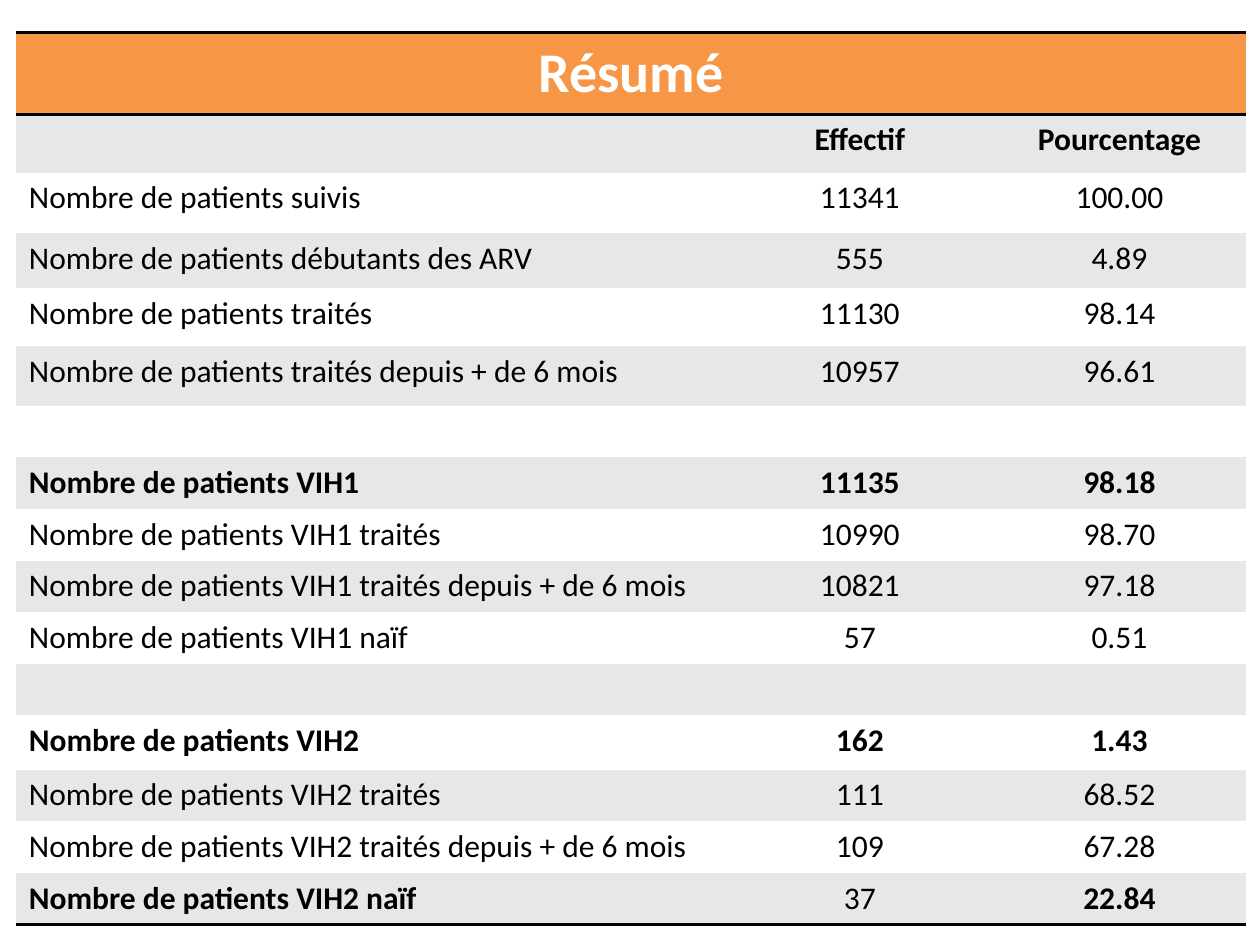
from typing import NamedTuple

from lxml import etree
from pptx import Presentation
from pptx.dml.color import RGBColor
from pptx.enum.text import PP_ALIGN
from pptx.oxml.ns import qn
from pptx.util import Inches, Pt

LEFT, CENTER = PP_ALIGN.LEFT, PP_ALIGN.CENTER
NO_STYLE_NO_GRID = "{2D5ABB26-0587-4C30-8999-92F81FD0307C}"
FONT = "Calibri"
BLACK, WHITE, GREY, ORANGE = "000000", "FFFFFF", "E7E7E7", "F79646"
COLUMN_WIDTHS = (5.64, 2.11, 2.01)
TITLE_HEIGHT = 0.65
RULE_WIDTH = 2


class Row(NamedTuple):
    label: str = ""
    count: str = ""
    percentage: str = ""
    height: float = 0.41
    bold: tuple[bool, bool, bool] = (False, False, False)


ALL_BOLD = (True, True, True)
ROWS = [
    Row("", "Effectif", "Pourcentage", 0.46, ALL_BOLD),
    Row("Nombre de patients suivis", "11341", "100.00", 0.48),
    Row("Nombre de patients débutants des ARV", "555", "4.89", 0.44),
    Row("Nombre de patients traités", "11130", "98.14", 0.46),
    Row("Nombre de patients traités depuis + de 6 mois", "10957", "96.61", 0.47),
    Row(),
    Row("Nombre de patients VIH1", "11135", "98.18", bold=ALL_BOLD),
    Row("Nombre de patients VIH1 traités", "10990", "98.70"),
    Row("Nombre de patients VIH1 traités depuis + de 6 mois", "10821", "97.18"),
    Row("Nombre de patients VIH1 naïf", "57", "0.51"),
    Row(),
    Row("Nombre de patients VIH2", "162", "1.43", 0.43, ALL_BOLD),
    Row("Nombre de patients VIH2 traités", "111", "68.52"),
    Row("Nombre de patients VIH2 traités depuis + de 6 mois", "109", "67.28"),
    Row("Nombre de patients VIH2 naïf", "37", "22.84", bold=(True, False, True)),
]


def rgb(value: str) -> RGBColor:
    return RGBColor.from_string(value)


def fill_cell(cell, color: str) -> None:
    cell.fill.solid()
    cell.fill.fore_color.rgb = rgb(color)


def write_cell(cell, text: str, size: int, color: str, bold: bool, align) -> None:
    paragraph = cell.text_frame.paragraphs[0]
    paragraph.alignment = align
    paragraph.font.size = Pt(size)
    if not text:
        return
    run = paragraph.add_run()
    run.text = text
    for attribute, value in {"name": FONT, "size": Pt(size), "bold": bold}.items():
        setattr(run.font, attribute, value)
    run.font.color.rgb = rgb(color)


def rule_cell(cell, *sides: str) -> None:
    """Draw black rules on the given sides ("T", "B"), listed in schema order."""
    properties = cell._tc.get_or_add_tcPr()
    for position, side in enumerate(sides):
        line = etree.Element(qn(f"a:ln{side}"), w=str(Pt(RULE_WIDTH)))
        solid = etree.SubElement(line, qn("a:solidFill"))
        etree.SubElement(solid, qn("a:srgbClr"), val=BLACK)
        properties.insert(position, line)


def add_summary_table(slide) -> None:
    heights = [TITLE_HEIGHT] + [row.height for row in ROWS]
    table = slide.shapes.add_table(
        len(heights), len(COLUMN_WIDTHS), Inches(0.13), Inches(0.26),
        Inches(sum(COLUMN_WIDTHS)), Inches(sum(heights))).table
    table.first_row = table.horz_banding = False
    table._tbl.tblPr.find(qn("a:tableStyleId")).text = NO_STYLE_NO_GRID
    for column, width in zip(table.columns, COLUMN_WIDTHS):
        column.width = Inches(width)
    for table_row, height in zip(table.rows, heights):
        table_row.height = Inches(height)

    title = table.cell(0, 0)
    title.merge(table.cell(0, len(COLUMN_WIDTHS) - 1))
    write_cell(title, "Résumé", 32, WHITE, True, CENTER)
    for cell in table.rows[0].cells:
        fill_cell(cell, ORANGE)
        rule_cell(cell, "T", "B")

    for number, row in enumerate(ROWS, start=1):
        texts = (row.label, row.count, row.percentage)
        for column, (text, bold) in enumerate(zip(texts, row.bold)):
            cell = table.cell(number, column)
            fill_cell(cell, GREY if number % 2 else WHITE)
            write_cell(cell, text, 18, BLACK, bold, CENTER if column else LEFT)
            if number == len(ROWS):
                rule_cell(cell, "B")


def main() -> None:
    presentation = Presentation()
    presentation.slide_width, presentation.slide_height = Inches(10), Inches(7.5)
    add_summary_table(presentation.slides.add_slide(presentation.slide_layouts[6]))
    presentation.save("out.pptx")


if __name__ == "__main__":
    main()
